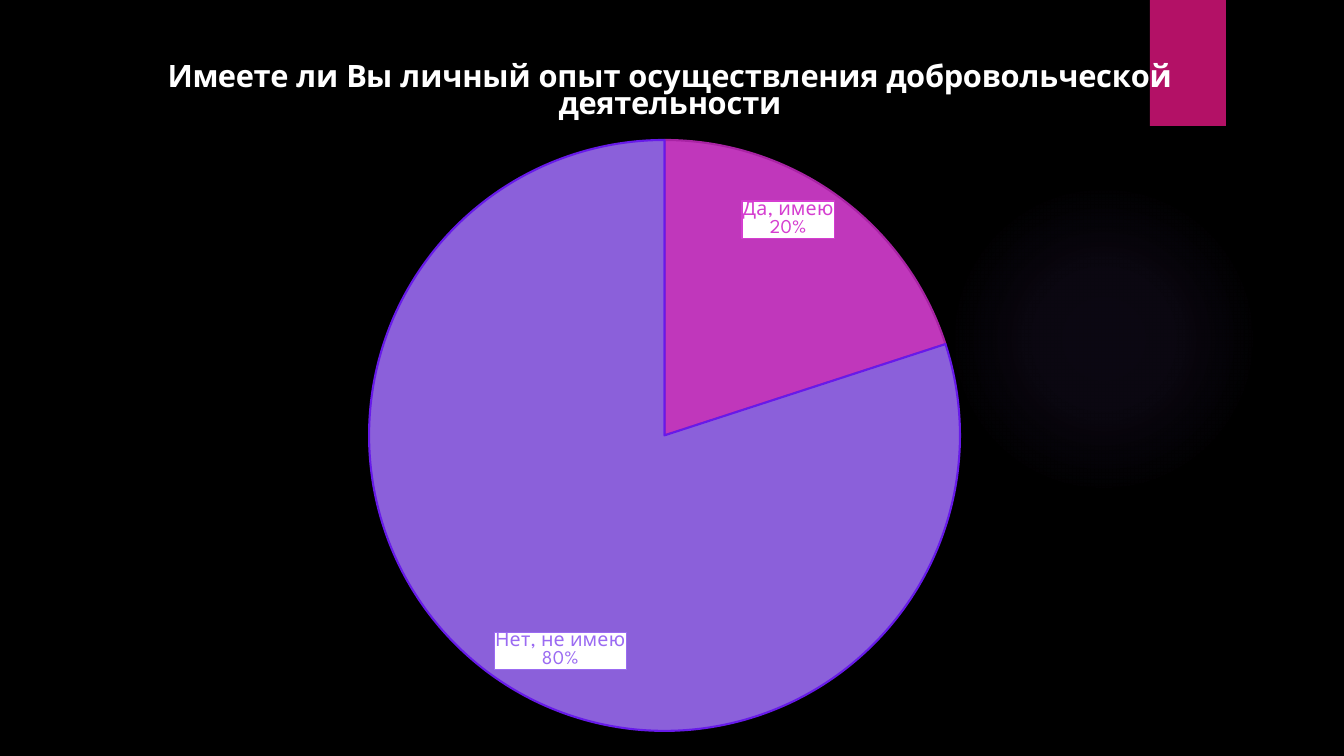
from dataclasses import dataclass

from lxml import etree
from pptx import Presentation
from pptx.chart.data import CategoryChartData as ChartData
from pptx.dml.color import RGBColor as RGB
from pptx.enum.chart import XL_CHART_TYPE as Kind, XL_LABEL_POSITION as Pos
from pptx.enum.shapes import MSO_SHAPE as Shape
from pptx.oxml import parse_xml
from pptx.oxml.ns import nsdecls, qn
from pptx.util import Pt

PX = 12192000 / 1344


@dataclass(frozen=True)
class Theme:
    font: str = "League Spartan"
    back: str = "000000"
    text: str = "FFFFFF"
    tab: str = "B31166"
    glow: str = "9B6BF2"
    fills: tuple = ("D53DD0", "9B6BF2")
    edges: tuple = ("A823A4", "671AE9")
    base: int = 10
    label: int = 14
    title: int = 22


def px(*vals):
    return [round(v * PX) for v in vals]


def solid(color, alpha=100):
    return (f'<a:solidFill {nsdecls("a")}><a:srgbClr val="{color}">'
            f'<a:alpha val="{alpha * 1000}"/></a:srgbClr></a:solidFill>')


def place(x, y, w=None, h=None):
    """Manual chart layout, as shares of the chart area."""
    inner = '<c:layoutTarget val="inner"/>' if w else ""
    size = f'<c:w val="{w:.4f}"/><c:h val="{h:.4f}"/>' if w else ""
    return parse_xml(
        f'<c:layout {nsdecls("c")}><c:manualLayout>{inner}'
        f'<c:xMode val="edge"/><c:yMode val="edge"/>'
        f'<c:x val="{x:.4f}"/><c:y val="{y:.4f}"/>{size}'
        f'</c:manualLayout></c:layout>')


class Deck:
    def __init__(self, theme):
        self.theme = theme
        self.prs = Presentation()
        self.prs.slide_width, self.prs.slide_height = px(1344, 756)
        self.slide = self.prs.slides.add_slide(self.prs.slide_layouts[6])
        fill = self.slide.background.fill
        fill.solid()
        fill.fore_color.rgb = RGB.from_string(theme.back)

    def shape(self, kind, box, color):
        item = self.slide.shapes.add_shape(kind, *px(*box))
        item.shadow.inherit = False
        item.line.fill.background()
        item.fill.solid()
        item.fill.fore_color.rgb = RGB.from_string(color)
        return item

    def glow(self, box, stops):
        color = self.theme.glow
        item = self.shape(Shape.OVAL, box, color)
        marks = "".join(
            f'<a:gs pos="{at * 1000}"><a:srgbClr val="{color}">'
            f'<a:alpha val="{alpha * 1000}"/></a:srgbClr></a:gs>'
            for at, alpha in stops)
        grad = parse_xml(
            f'<a:gradFill {nsdecls("a")}><a:gsLst>{marks}</a:gsLst>'
            '<a:path path="circle"><a:fillToRect l="50000" t="50000" '
            'r="50000" b="50000"/></a:path></a:gradFill>')
        old = item._element.spPr.find(qn("a:solidFill"))
        old.getparent().replace(old, grad)

    def style(self, font, size, color, bold=False):
        font.name = self.theme.font
        font.size = Pt(size)
        font.bold = bold
        font.color.rgb = RGB.from_string(color)

    def pie(self, box, plot, head, title, values):
        look = self.theme
        data = ChartData()
        data.categories = list(values)
        data.add_series("Series 1", list(values.values()))
        chart = self.slide.shapes.add_chart(Kind.PIE, *px(*box), data).chart
        chart.has_legend = False
        self.style(chart.font, look.base, look.text)

        # Title
        left, top, wide, high = box
        frame = chart.chart_title.text_frame
        frame.text = title
        self.style(frame.paragraphs[0].runs[0].font, look.title, look.text, True)
        node = chart.chart_title._element
        for old in node.findall(qn("c:layout")):
            node.remove(old)
        spot = place((head[0] - left) / wide, (head[1] - top) / high)
        node.find(qn("c:tx")).addnext(spot)

        # Plot area
        area = chart._chartSpace.chart.plotArea
        for old in area.findall(qn("c:layout")):
            area.remove(old)
        x, y, w, h = plot
        area.insert(0, place((x - left) / wide, (y - top) / high,
                             w / wide, h / high))

        # Slices and their labels
        chart.plots[0].vary_by_categories = True
        series = chart.plots[0].series[0]
        for i, (fill, edge) in enumerate(zip(look.fills, look.edges)):
            point = series.points[i]
            point.format.fill.solid()
            point.format.fill.fore_color.rgb = RGB.from_string(fill)
            point.format.line.color.rgb = RGB.from_string(edge)
            point.format.line.width = Pt(1.5)
            paint = point.format.fill._xPr.find(qn("a:solidFill"))
            paint.getparent().replace(paint, parse_xml(solid(fill, 90)))
            self.tag(series, i, fill)

    def tag(self, series, i, color):
        label = series.points[i].data_label
        self.style(label.font, self.theme.label, color)
        label.position = Pos.INSIDE_END
        node = series._element.find(qn("c:dLbls")).findall(qn("c:dLbl"))[i]
        node.find(qn("c:txPr")).addprevious(parse_xml(
            f'<c:spPr {nsdecls("c", "a")}>{solid(self.theme.text)}'
            f'<a:ln w="12700">{solid(color)}</a:ln></c:spPr>'))
        for name, on in (("Val", 0), ("CatName", 1), ("Percent", 1)):
            node.find(qn(f"c:show{name}")).set("val", str(on))
        etree.SubElement(node, qn("c:separator")).text = "\n"

    def save(self):
        self.prs.save("out.pptx")


def main():
    theme = Theme()
    deck = Deck(theme)

    # Backdrop
    deck.glow((949, 184, 310, 310), ((0, 7), (36, 6), (69, 0)))
    deck.shape(Shape.RECTANGLE, (1150, 0, 76, 126), theme.tab)

    # Survey result
    deck.pie(
        box=(0, 34, 1329, 712), plot=(369, 140, 591, 591), head=(162, 57),
        title="Имеете ли Вы личный опыт осуществления добровольческой деятельности",
        values={"Да, имею": 20, "Нет, не имею": 80})
    deck.save()


if __name__ == "__main__":
    main()
